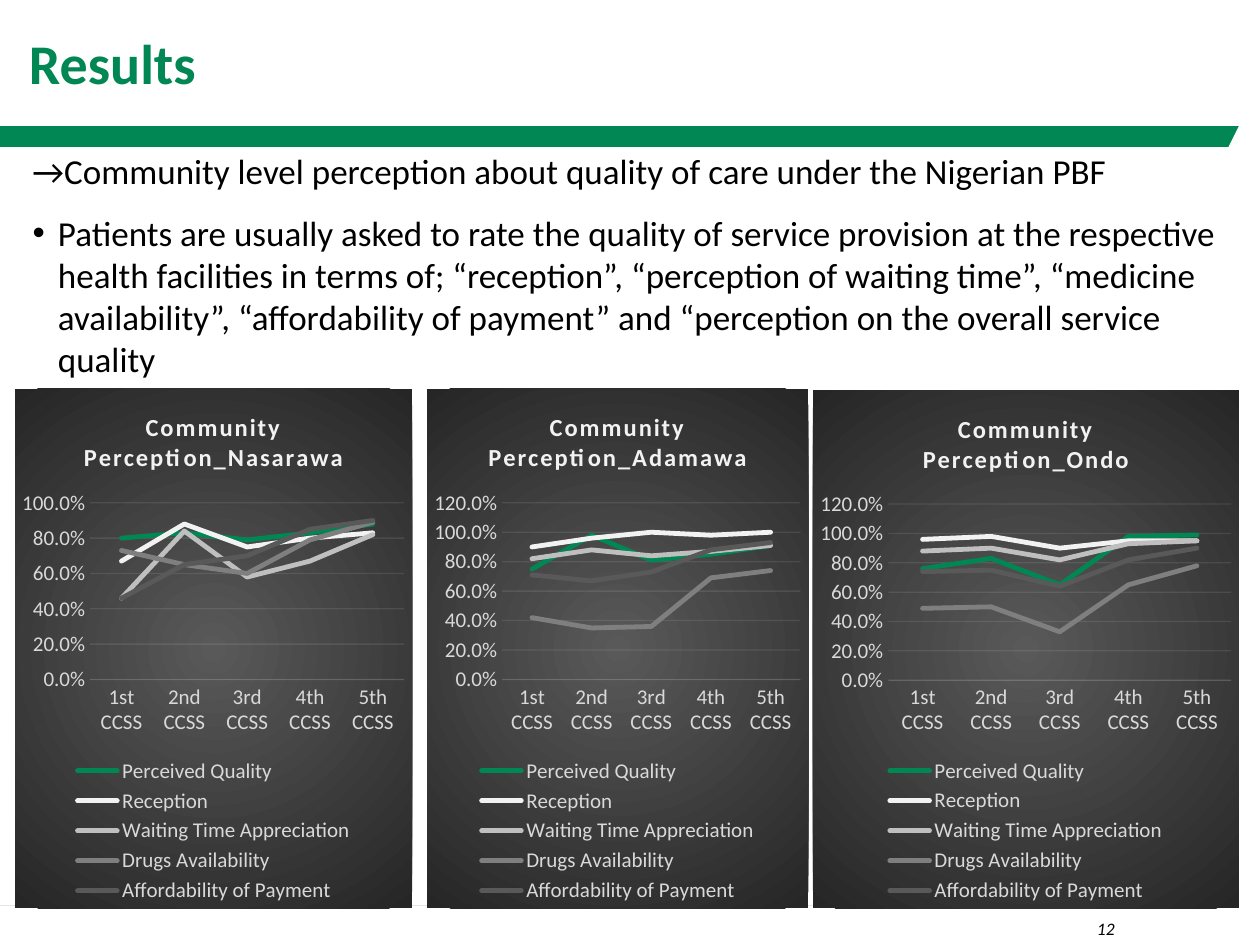
from lxml import etree
from pptx import Presentation
from pptx.chart.data import CategoryChartData
from pptx.dml.color import RGBColor
from pptx.enum.chart import XL_CHART_TYPE as ChartType, XL_LEGEND_POSITION as LegendPosition
from pptx.enum.chart import XL_MARKER_STYLE as Marker, XL_TICK_MARK as Tick
from pptx.enum.shapes import MSO_CONNECTOR as Connector, MSO_SHAPE as Shape
from pptx.enum.text import MSO_ANCHOR as Anchor, PP_ALIGN as Align
from pptx.oxml import parse_xml
from pptx.oxml.ns import nsdecls, qn
from pptx.util import Pt

COLORS = {
    "green": "008753", "white": "FFFFFF", "black": "000000", "rule": "E5E5E5",
    "light": "F2F2F2", "label": "D9D9D9", "silver": "BFBFBF", "gray": "7F7F7F",
    "dark": "595959", "night": "262626",
}
FONT = "Calibri"
ROUNDS = ["1st CCSS", "2nd CCSS", "3rd CCSS", "4th CCSS", "5th CCSS"]
SERIES = [
    ("Perceived Quality", "green"),
    ("Reception", "light"),
    ("Waiting Time Appreciation", "silver"),
    ("Drugs Availability", "gray"),
    ("Affordability of Payment", "dark"),
]
# state, (left, top, width, height), axis maximum, one row of values per series
STATES = [
    ("Nasarawa", (8.6, 222, 227, 297), 1, [
        (0.8, 0.83, 0.79, 0.83, 0.88), (0.67, 0.88, 0.75, 0.8, 0.83),
        (0.46, 0.84, 0.58, 0.67, 0.82), (0.73, 0.65, 0.6, 0.79, 0.89),
        (0.46, 0.65, 0.7, 0.85, 0.9)]),
    ("Adamawa", (244, 222, 218, 297), 1.2, [
        (0.75, 0.98, 0.81, 0.85, 0.91), (0.9, 0.96, 1, 0.98, 1),
        (0.82, 0.88, 0.84, 0.87, 0.91), (0.42, 0.35, 0.36, 0.69, 0.74),
        (0.71, 0.67, 0.73, 0.88, 0.93)]),
    ("Ondo", (464.5, 223, 243.5, 296), 1.2, [
        (0.76, 0.83, 0.65, 0.98, 0.99), (0.96, 0.98, 0.9, 0.95, 0.95),
        (0.88, 0.9, 0.82, 0.93, 0.95), (0.49, 0.5, 0.33, 0.65, 0.78),
        (0.74, 0.75, 0.64, 0.82, 0.9)]),
]


def rgb(name):
    return RGBColor.from_string(COLORS[name])


class SlideBuilder:
    """Holds the current slide and the style shared by its elements."""

    def __init__(self, page):
        self.page = page

    def style(self, font, size, color, bold=False, italic=False):
        font.name, font.size = FONT, Pt(size)
        font.bold, font.italic = bold, italic
        font.color.rgb = rgb(color)

    def shape(self, kind, left, top, width, height, color):
        shape = self.page.shapes.add_shape(kind, Pt(left), Pt(top), Pt(width), Pt(height))
        shape.shadow.inherit = False
        shape.fill.solid()
        shape.fill.fore_color.rgb = rgb(color)
        shape.line.fill.background()

    def rule(self, left, right, top, color):
        line = self.page.shapes.add_connector(
            Connector.STRAIGHT, Pt(left), Pt(top), Pt(right), Pt(top))
        line.line.color.rgb = rgb(color)
        line.line.width = Pt(1)
        etree.SubElement(line._element.spPr, qn("a:effectLst"))

    def text(self, words, left, top, width, height, size, color="black", bold=False,
             italic=False, align=Align.LEFT, anchor=Anchor.TOP, margin=0, bullet=False):
        box = self.page.shapes.add_textbox(Pt(left), Pt(top), Pt(width), Pt(height))
        frame = box.text_frame
        frame.word_wrap = True
        frame.vertical_anchor = anchor
        para = frame.paragraphs[0]
        para.alignment = align
        props = para._p.get_or_add_pPr()
        props.set("marL", str(Pt(margin)))
        if bullet:
            props.set("indent", str(-Pt(margin)))
            etree.SubElement(props, qn("a:buFont"), typeface="Arial")
            etree.SubElement(props, qn("a:buChar"), char="•")
        span = para.add_run()
        span.text = words
        self.style(span.font, size, color, bold, italic)

    def line_chart(self, title, place, maximum, rows):
        data = CategoryChartData(number_format="0.0%")
        data.categories = ROUNDS
        for (name, _), values in zip(SERIES, rows):
            data.add_series(name, values)
        chart = self.page.shapes.add_chart(
            ChartType.LINE, *(Pt(length) for length in place), data).chart
        self.style(chart.font, 12, "label")
        self.chart_title(chart, title)
        self.chart_background(chart)
        self.plot_layout(chart, place[2])
        self.axes(chart, maximum)
        chart.has_legend = True
        chart.legend.position = LegendPosition.BOTTOM
        chart.legend.include_in_layout = False
        self.style(chart.legend.font, 12, "label")
        for series, (_, color) in zip(chart.plots[0].series, SERIES):
            series.smooth = False
            series.marker.style = Marker.NONE
            series.format.line.color.rgb = rgb(color)
            series.format.line.width = Pt(2.75)
            series.format.line._get_or_add_ln().set("cap", "rnd")

    def chart_title(self, chart, title):
        chart.has_title = True
        chart.chart_title.include_in_layout = False
        span = chart.chart_title.text_frame.paragraphs[0].add_run()
        span.text = title
        self.style(span.font, 14, "light", bold=True)
        span.font._element.set("spc", "100")

    def chart_background(self, chart):
        """Fill the chart with a gradient that darkens from its centre."""
        chart._chartSpace.find(qn("c:chart")).addnext(parse_xml(
            f'<c:spPr {nsdecls("c", "a")}><a:gradFill><a:gsLst>'
            f'<a:gs pos="0"><a:srgbClr val="{COLORS["dark"]}"/></a:gs>'
            f'<a:gs pos="100000"><a:srgbClr val="{COLORS["night"]}"/></a:gs></a:gsLst>'
            '<a:path path="circle"><a:fillToRect l="50000" t="50000" r="50000" b="50000"/>'
            '</a:path></a:gradFill><a:ln><a:noFill/></a:ln></c:spPr>'))

    def plot_layout(self, chart, width):
        """Keep the same margins, in points, beside the plot of every chart."""
        left, right = 43, 4.5
        fractions = {"x": left / width, "y": 0.22, "w": (width - left - right) / width, "h": 0.34}
        area = chart._chartSpace.chart.plotArea
        for old in area.findall(qn("c:layout")):
            area.remove(old)
        layout = etree.Element(qn("c:layout"))
        manual = etree.SubElement(layout, qn("c:manualLayout"))
        settings = {"layoutTarget": "inner", "xMode": "edge", "yMode": "edge"}
        settings.update({key: f"{value:.3f}" for key, value in fractions.items()})
        for tag, value in settings.items():
            etree.SubElement(manual, qn(f"c:{tag}"), val=value)
        area.insert(0, layout)

    def axes(self, chart, maximum):
        rounds, shares = chart.category_axis, chart.value_axis
        for axis in (rounds, shares):
            axis.major_tick_mark = axis.minor_tick_mark = Tick.NONE
            self.style(axis.tick_labels.font, 12, "label")
        shares.minimum_scale, shares.maximum_scale, shares.major_unit = 0, maximum, 0.2
        shares.tick_labels.number_format = "0.0%"
        shares.tick_labels.number_format_is_linked = False
        shares.format.line.fill.background()
        self.faint(rounds.format.line)
        self.faint(shares.major_gridlines.format.line)

    def faint(self, line):
        line.color.rgb = rgb("light")
        line.width = Pt(0.75)
        color = line._get_or_add_ln().find(f".//{qn('a:srgbClr')}")
        etree.SubElement(color, qn("a:alpha"), val="10000")


def main():
    deck = Presentation()
    deck.slide_width, deck.slide_height = Pt(720), Pt(540)
    slide = SlideBuilder(deck.slides.add_slide(deck.slide_layouts[6]))

    slide.shape(Shape.RECTANGLE, 0, 72, 708, 12, "green")
    slide.shape(Shape.ISOSCELES_TRIANGLE, 700.5, 72, 15, 15, "white")
    slide.rule(0, 648, 517.5, "rule")
    slide.text("Results", 0, 0, 720, 71.5, 32, "green", bold=True,
               anchor=Anchor.MIDDLE, margin=9.5)
    slide.text("12", 576, 521, 68, 17, 10, italic=True, align=Align.RIGHT)
    slide.text("→Community level perception about quality of care under the Nigerian PBF",
               11.5, 82, 672.5, 24.5, 20)
    slide.text("Patients are usually asked to rate the quality of service provision at the "
               "respective health facilities in terms of; “reception”, “perception of waiting "
               "time”, “medicine availability”, “affordability of payment” and “perception on "
               "the overall service quality", 11.5, 117.5, 699, 120, 20, margin=14.5, bullet=True)
    for state, place, maximum, rows in STATES:
        slide.line_chart(f"Community Perception_{state}", place, maximum, rows)

    deck.save("out.pptx")


if __name__ == "__main__":
    main()
